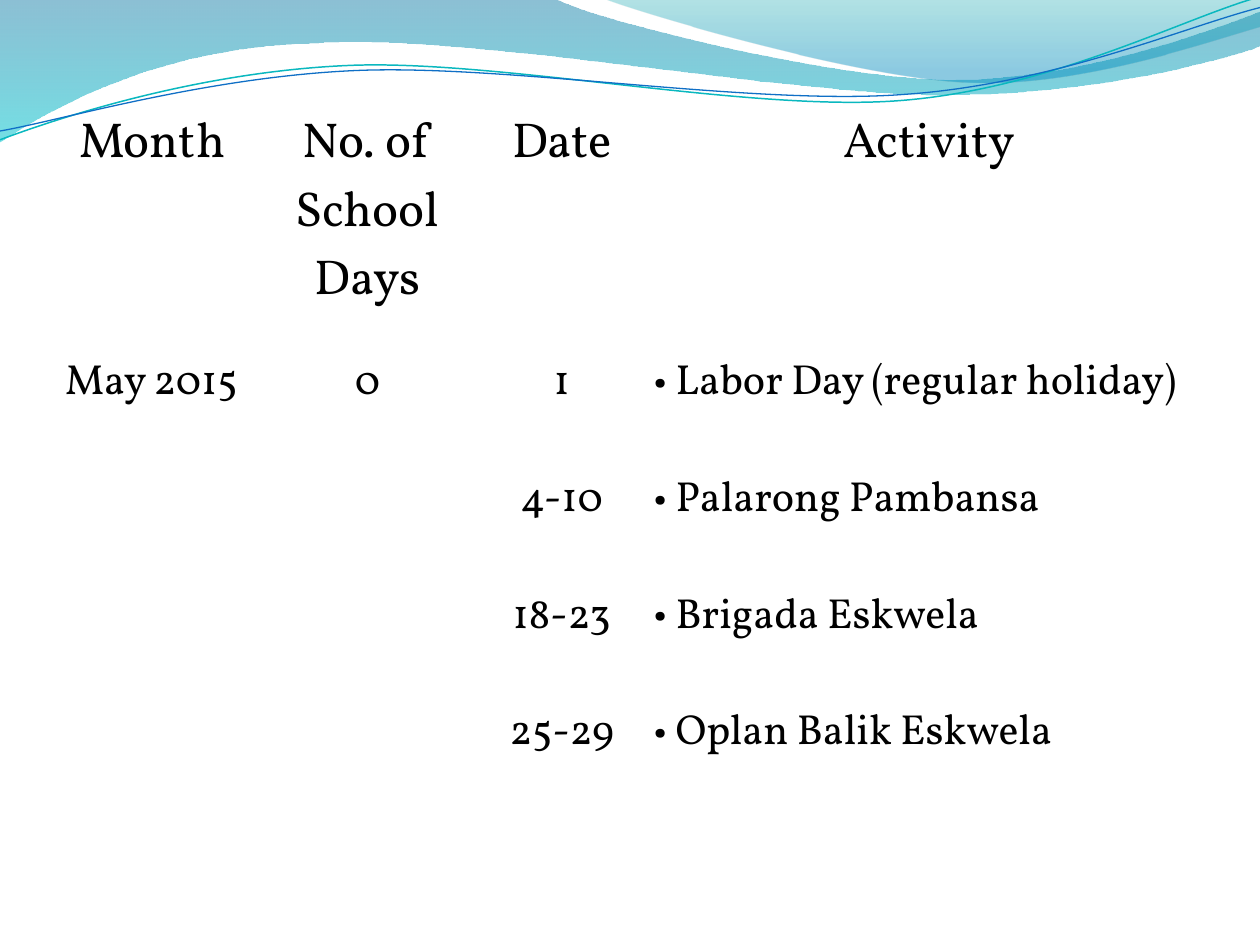
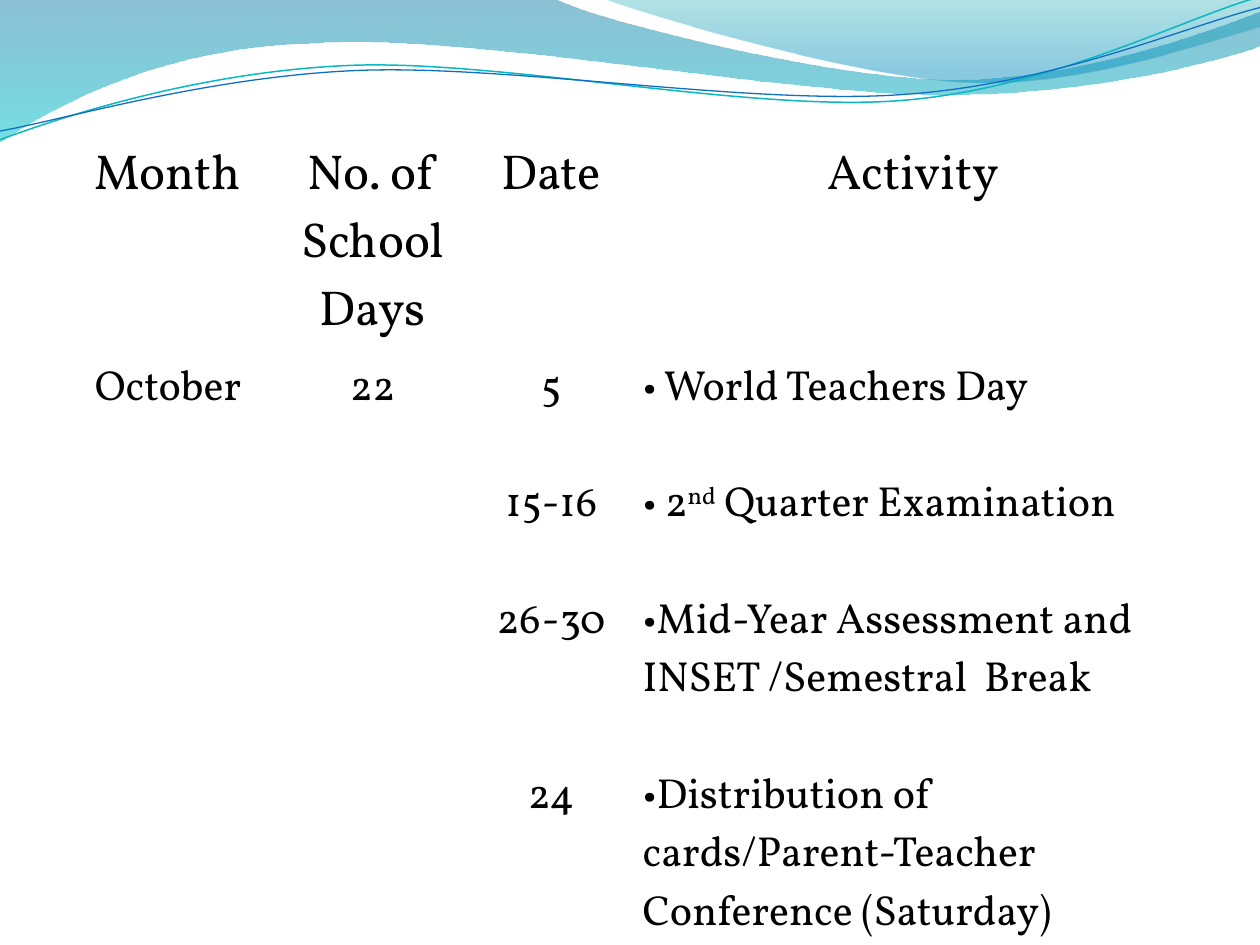
from lxml.etree import SubElement
from pptx import Presentation
from pptx.dml.color import RGBColor
from pptx.enum.text import PP_ALIGN
from pptx.oxml.ns import qn
from pptx.util import Pt

COLORS = {
    "text": "000000",
    "band_top": "0074A1", "band_bottom": "00C6CF",
    "crest_top": "00A1A9", "crest_bottom": "008BBF",
    "teal_line": "0AB8BF", "blue_line": "0F6FC6",
}
FONT = "Vollkorn"
HEADINGS = ["Month", "No. of School Days", "Date", "Activity"]
HEADING_SIZE, ENTRY_SIZE = 28, 24
ENTRY_LINE = 33.3  # height of one line of entries, in points
NO_STYLE_NO_GRID = "{2D5ABB26-0587-4C30-8999-92F81FD0307C}"

# Grid: 120 columns by 90 rows of square units
UNIT = 76200
TENTH = 12 * UNIT  # a tenth of the slide's width, the scale of the waves

prs = Presentation()
prs.slide_width, prs.slide_height = 120 * UNIT, 90 * UNIT
blank = prs.slide_layouts[6]

# Waves: one point is a straight step, three points a Bezier curve
waves = [
    {"start": (0, 0),
     "steps": [[(4.4, -0.01)],
               [(4.76, 0.17), (6.64, 0.63), (7.58, 0.63)],
               [(8.53, 0.63), (9.58, 0.26), (10, 0.09)],
               [(10.01, 0.36)],
               [(9.83, 0.44), (8.7, 0.76), (7.46, 0.75)],
               [(6.22, 0.75), (3.82, 0.28), (2.57, 0.34)],
               [(1.29, 0.36), (0.46, 0.83), (-0.01, 1.13)],
               [(0, 0)]],
     "gradient": [(0, "band_top", 45), (1, "band_bottom", 55)]},
    {"start": (4.79, -0.01),
     "steps": [[(5.09, 0.11), (6.82, 0.62), (7.69, 0.65)],
               [(8.56, 0.69), (9.61, 0.32), (10, 0.21)],
               [(10, 0)],
               [(4.79, -0.01)]],
     "gradient": [(0, "crest_top", 30), (0.8, "crest_bottom", 45)]},
    {"start": (0, 1.11),
     "steps": [[(0.48, 0.93), (1.58, 0.57), (2.77, 0.52)],
               [(3.95, 0.47), (5.93, 0.89), (7.13, 0.8)],
               [(8.33, 0.71), (9.38, 0.15), (9.98, -0.02)]],
     "line": ("teal_line", 0.85)},
    {"start": (0, 1.04),
     "steps": [[(0.47, 0.96), (1.64, 0.61), (2.83, 0.56)],
               [(4.03, 0.51), (5.97, 0.84), (7.17, 0.75)],
               [(8.36, 0.67), (9.41, 0.21), (10, 0.06)]],
     "line": ("blue_line", 0.75)},
]

calendar = [
    {"left": 5, "top": 10, "columns": [19, 22, 15, 55], "rows": [23.2, 44.8],
     "height": 68, "month": "May 2015", "month_align": PP_ALIGN.LEFT,
     "school_days": "0",
     # each date with the free lines above it
     "dates": [("1", 0), ("4-10", 1), ("18-23", 1), ("25-29", 1)],
     "activities": [" Labor Day (regular holiday)", " Palarong Pambansa",
                    " Brigada Eskwela", " Oplan Balik Eskwela"]},
    {"left": 6, "top": 13, "columns": [20, 19, 15, 54], "rows": [11, 35],
     "height": 67.2, "month": "October", "month_align": PP_ALIGN.CENTER,
     "school_days": "22",
     "dates": [("5", 0), ("15-16", 1), ("26-30", 1), ("24", 2)],
     # text between carets is raised
     "activities": [" World Teachers Day", " 2^nd^ Quarter Examination",
                    "Mid-Year Assessment and INSET /Semestral  Break",
                    "Distribution of cards/Parent-Teacher Conference (Saturday)"]},
]


def draw_wave(shapes, start, steps, closed):
    """Build an outline through all points, then bend its three-point steps."""
    builder = shapes.build_freeform(start[0] * TENTH, start[1] * TENTH)
    corners = [(x * TENTH, y * TENTH) for step in steps for x, y in step]
    builder.add_line_segments(corners, close=closed)
    shape = builder.convert_to_shape()
    outline = next(shape._element.iter(qn("a:path")))
    segments = iter(outline.findall(qn("a:lnTo")))
    for step in steps:
        group = [next(segments) for _ in step]
        if len(group) == 3:
            curve = outline.makeelement(qn("a:cubicBezTo"))
            group[0].addprevious(curve)
            for segment in group:
                curve.append(segment[0])
                outline.remove(segment)
    return shape


def fill_cell(cell, entries, size, align, bulleted=False):
    """Write (text, free lines above) entries into a table cell."""
    cell.fill.background()
    for i, (text, free_lines) in enumerate(entries):
        frame = cell.text_frame
        paragraph = frame.add_paragraph() if i else frame.paragraphs[0]
        paragraph.alignment = align
        if free_lines:
            paragraph.space_before = Pt(free_lines * ENTRY_LINE)
        if bulleted:
            properties = paragraph._p.get_or_add_pPr()
            properties.set("marL", "0")
            properties.set("indent", "0")
            SubElement(properties, qn("a:buFont")).set("typeface", FONT)
            SubElement(properties, qn("a:buChar")).set("char", "•")
        for part, piece in enumerate(text.split("^")):
            run = paragraph.add_run()
            run.text = piece
            run.font.name, run.font.size = FONT, Pt(size)
            run.font.color.rgb = RGBColor.from_string(COLORS["text"])
            if part % 2:
                run.font._element.set("baseline", "30000")


# Month tables
slides = []
for month in calendar:
    slide = prs.slides.add_slide(blank)
    slides.append(slide)
    holder = slide.shapes.add_table(
        2, len(HEADINGS), month["left"] * UNIT, month["top"] * UNIT,
        sum(month["columns"]) * UNIT, int(month["height"] * UNIT))
    schedule = holder.table
    schedule.first_row = schedule.horz_banding = False
    schedule._tbl.tblPr.find(qn("a:tableStyleId")).text = NO_STYLE_NO_GRID
    for column, width in zip(schedule.columns, month["columns"]):
        column.width = width * UNIT
    for row, height in zip(schedule.rows, month["rows"]):
        row.height = int(height * UNIT)
    holder.height = int(month["height"] * UNIT)

    for column, heading in enumerate(HEADINGS):
        fill_cell(schedule.cell(0, column), [(heading, 0)], HEADING_SIZE, PP_ALIGN.CENTER)
    fill_cell(schedule.cell(1, 0), [(month["month"], 0)], ENTRY_SIZE, month["month_align"])
    fill_cell(schedule.cell(1, 1), [(month["school_days"], 0)], ENTRY_SIZE, PP_ALIGN.CENTER)
    fill_cell(schedule.cell(1, 2), month["dates"], ENTRY_SIZE, PP_ALIGN.CENTER)
    activities = [(text, min(i, 1)) for i, text in enumerate(month["activities"])]
    fill_cell(schedule.cell(1, 3), activities, ENTRY_SIZE, PP_ALIGN.LEFT, bulleted=True)

# Waves, drawn once and moved to the shared layout
for placeholder in list(blank.placeholders):
    placeholder.element.getparent().remove(placeholder.element)
ribbons = []
for wave in waves:
    ribbon = draw_wave(slides[0].shapes, wave["start"], wave["steps"], "gradient" in wave)
    ribbon.shadow.inherit = False
    if "gradient" in wave:
        ribbon.line.fill.background()
        ribbon.fill.gradient()
        ribbon.fill.gradient_angle = 270
        for stop, (position, color, opacity) in zip(ribbon.fill.gradient_stops, wave["gradient"]):
            stop.position = position
            stop.color.rgb = RGBColor.from_string(COLORS[color])
            tint = stop._gs.find(qn("a:srgbClr"))
            SubElement(tint, qn("a:alpha")).set("val", str(opacity * 1000))
    else:
        color, width = wave["line"]
        ribbon.fill.background()
        ribbon.line.color.rgb = RGBColor.from_string(COLORS[color])
        ribbon.line.width = Pt(width)
    ribbons.append(ribbon)
for ribbon in ribbons:
    blank.shapes._spTree.append(ribbon._element)

prs.save("out.pptx")
